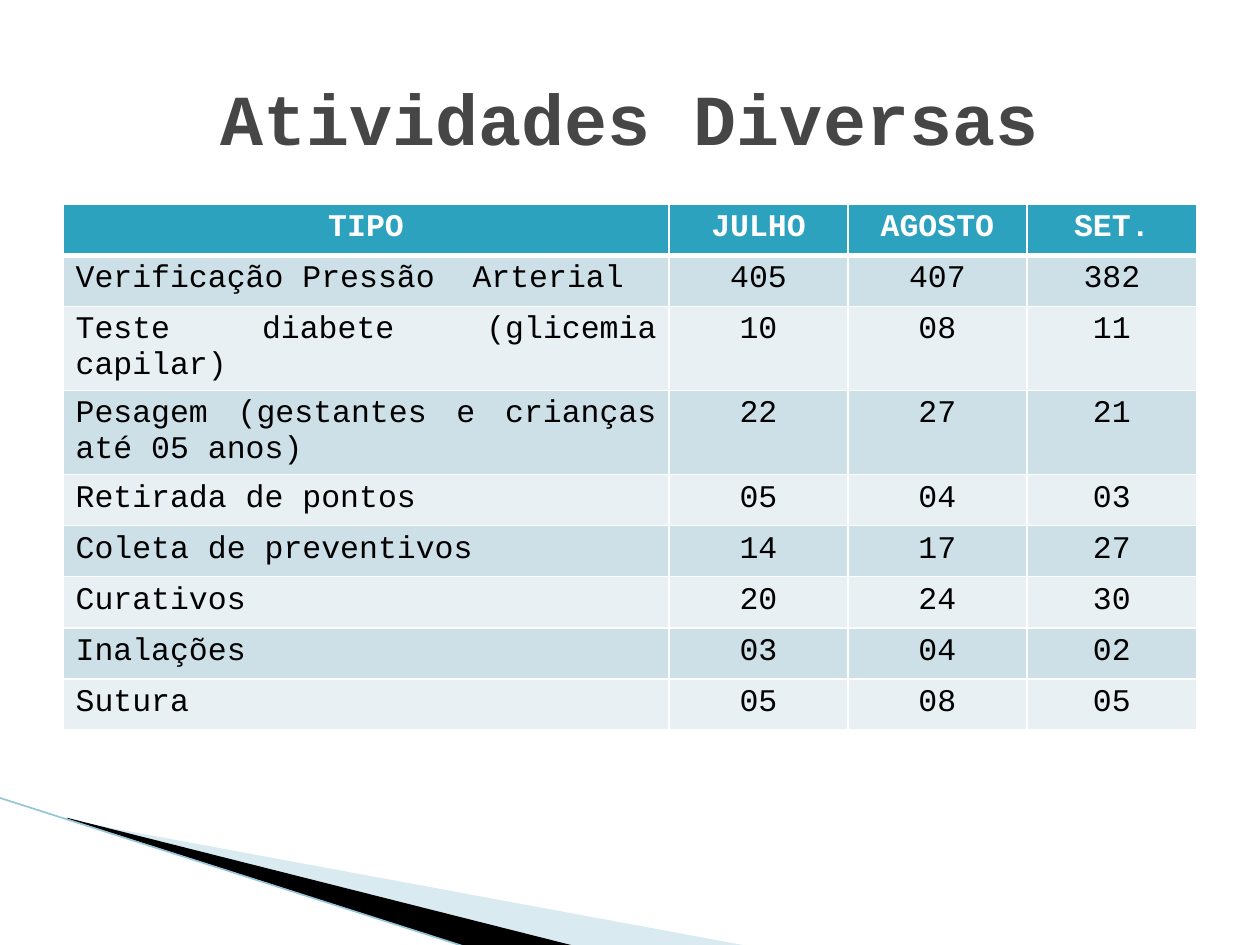
import pptx
import pptx.dml.color
import pptx.enum.shapes
import pptx.enum.text
import pptx.oxml
import pptx.util

INCH = pptx.util.Inches
ALIGN = pptx.enum.text.PP_ALIGN
ANCHOR = pptx.enum.text.MSO_ANCHOR
NS = 'xmlns:a="http://schemas.openxmlformats.org/drawingml/2006/main"'
WIDE, HIGH = 10, 7.5
EDGE = WIDE * 0.05
SPAN = WIDE - 2 * EDGE
COLS = [4.81, 1.42, 1.42, 1.35]
FONT = "Courier New"
HUES = {
    "title": "464646", "head": "2DA2BF", "odd": "CDE0E8", "even": "E8F0F4",
    "white": "FFFFFF", "black": "000000", "pale": "A0CBDC", "line": "97C5D8",
}
ROWS = [
    ("TIPO", "JULHO", "AGOSTO", "SET."),
    ("Verificação Pressão  Arterial", "405", "407", "382"),
    ("Teste diabete (glicemia capilar)", "10", "08", "11"),
    ("Pesagem (gestantes e crianças até 05 anos)", "22", "27", "21"),
    ("Retirada de pontos", "05", "04", "03"),
    ("Coleta de preventivos", "14", "17", "27"),
    ("Curativos", "20", "24", "30"),
    ("Inalações", "03", "04", "02"),
    ("Sutura", "05", "08", "05"),
]


def color(name):
    return pptx.dml.color.RGBColor.from_string(HUES[name])


def style(frame, text, size, hue, bold, align):
    frame.text = text
    para = frame.paragraphs[0]
    para.alignment = align
    font = para.runs[0].font
    font.name, font.size, font.bold = FONT, pptx.util.Pt(size), bold
    font.color.rgb = color(hue)


def wedge(slide, points, hue, alpha=100):
    spots = [(INCH(x), INCH(y)) for x, y in points]
    build = slide.shapes.build_freeform(*spots[0], scale=1.0)
    build.add_line_segments(spots[1:], close=True)
    shape = build.convert_to_shape()
    shape.shadow.inherit = False
    shape.line.fill.background()
    shape.fill.solid()
    shape.fill.fore_color.rgb = color(hue)
    if alpha < 100:
        tint = shape.fill._xPr.solidFill[0]
        tint.append(pptx.oxml.parse_xml(f'<a:alpha {NS} val="{alpha * 1000}"/>'))


def stroke(slide, start, end, hue, width):
    kind = pptx.enum.shapes.MSO_CONNECTOR.STRAIGHT
    line = slide.shapes.add_connector(kind, *map(INCH, start + end))
    line.line.color.rgb = color(hue)
    line.line.width = pptx.util.Pt(width)
    line._element.spPr.append(pptx.oxml.parse_xml(f"<a:effectLst {NS}/>"))


def border(cell, row):
    props = cell._tc.get_or_add_tcPr()
    thick = {"T": 3 if row == 1 else 1, "B": 3 if row == 0 else 1}
    for side in "LRTB":
        width = pptx.util.Pt(thick.get(side, 1))
        props.append(pptx.oxml.parse_xml(
            f'<a:ln{side} {NS} w="{width}"><a:solidFill>'
            f'<a:srgbClr val="{HUES["white"]}"/></a:solidFill></a:ln{side}>'))


def grid(slide, top):
    tall = pptx.util.Pt(29.2)
    table = slide.shapes.add_table(
        len(ROWS), len(COLS), INCH(EDGE), INCH(top), INCH(SPAN),
        tall * len(ROWS)).table
    for col, width in zip(table.columns, COLS):
        col.width = INCH(width)
    for r, row in enumerate(ROWS):
        table.rows[r].height = tall
        head = r == 0
        fill = "head" if head else ("even", "odd")[r % 2]
        for c, text in enumerate(row):
            cell = table.cell(r, c)
            align = ALIGN.CENTER if head or c else ALIGN.JUSTIFY
            style(cell.text_frame, text, 18, "white" if head else "black", head, align)
            border(cell, r)
            cell.fill.solid()
            cell.fill.fore_color.rgb = color(fill)


def title(slide, text):
    box = slide.shapes.add_textbox(
        *map(INCH, (EDGE, HIGH * 0.04, SPAN, HIGH / 6)))
    frame = box.text_frame
    frame.word_wrap = True
    frame.vertical_anchor = ANCHOR.MIDDLE
    style(frame, text, 41, "title", True, ALIGN.CENTER)


def main():
    deck = pptx.Presentation()
    deck.slide_width, deck.slide_height = INCH(WIDE), INCH(HIGH)
    slide = deck.slides.add_slide(deck.slide_layouts[6])
    wedge(slide, [(0.55, 6.51), (5.95, 7.51), (4.56, 7.51), (0.55, 6.5)], "pale", 40)
    wedge(slide, [(0.53, 6.49), (4.57, 7.51), (3.72, 7.52), (0.54, 6.5)], "black")
    stroke(slide, (-0.01, 6.33), (3.71, 7.52), "line", 0.95)
    grid(slide, 1.62)
    title(slide, "Atividades Diversas")
    deck.save("out.pptx")


if __name__ == "__main__":
    main()
